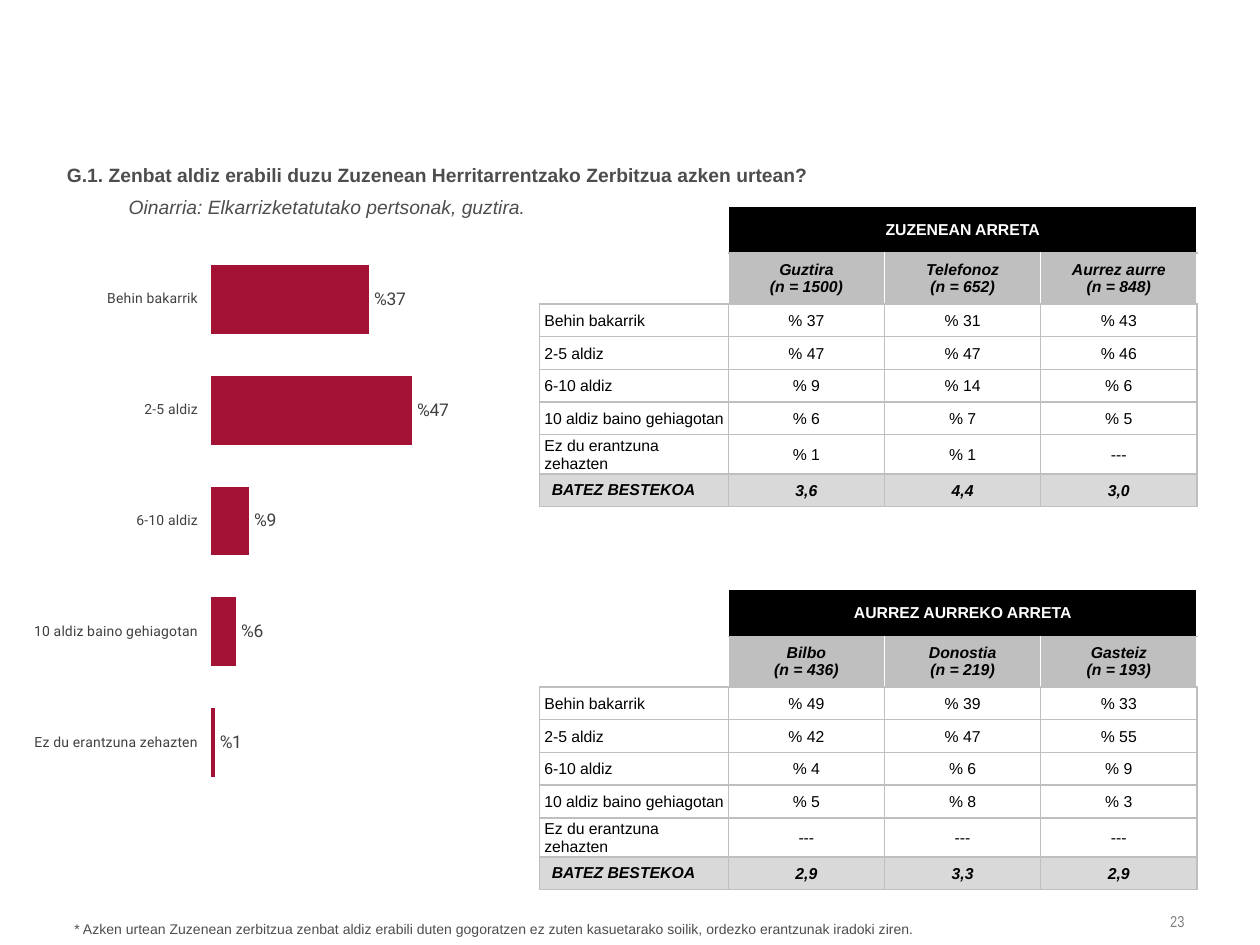
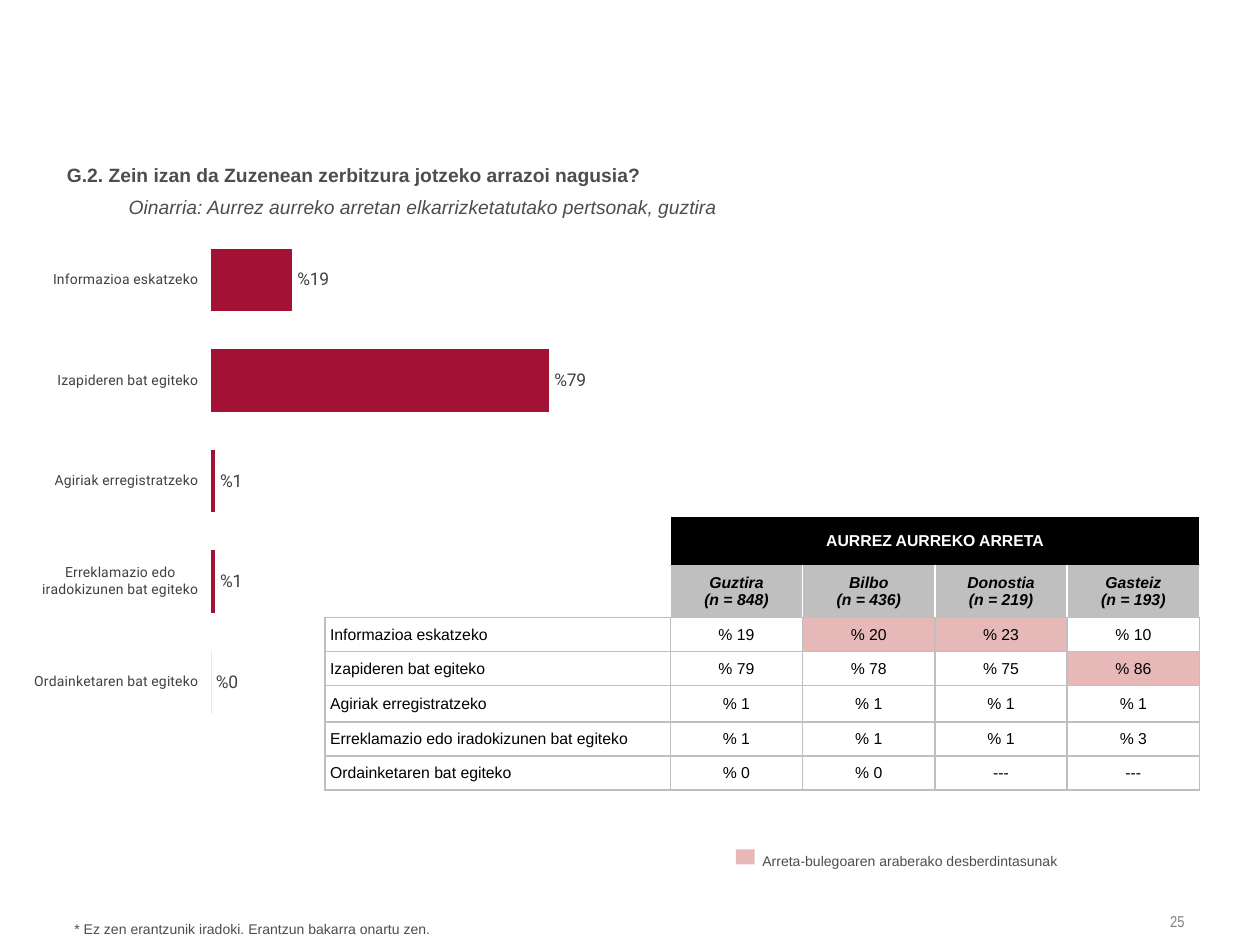
from dataclasses import dataclass
from typing import Optional

from lxml import etree
from pptx import Presentation
from pptx.chart.data import CategoryChartData
from pptx.dml.color import RGBColor
from pptx.enum.chart import XL_CHART_TYPE, XL_LABEL_POSITION, XL_TICK_LABEL_POSITION, XL_TICK_MARK
from pptx.enum.shapes import MSO_SHAPE
from pptx.enum.text import MSO_ANCHOR, MSO_AUTO_SIZE, PP_ALIGN
from pptx.oxml import parse_xml
from pptx.oxml.ns import nsdecls, qn
from pptx.util import Inches, Pt

BAR = XL_CHART_TYPE.BAR_CLUSTERED
OUTSIDE_END = XL_LABEL_POSITION.OUTSIDE_END
LABELS_LOW = XL_TICK_LABEL_POSITION.LOW
TICK_OUT = XL_TICK_MARK.OUTSIDE
RECT = MSO_SHAPE.RECTANGLE
MIDDLE = MSO_ANCHOR.MIDDLE
GROW = MSO_AUTO_SIZE.SHAPE_TO_FIT_TEXT
LEFT, CENTER, RIGHT = PP_ALIGN.LEFT, PP_ALIGN.CENTER, PP_ALIGN.RIGHT

COLORS = {
    "text": "4D4D4D",
    "number": "808080",
    "chart_text": "404040",
    "bar": "A31235",
    "black": "000000",
    "white": "FFFFFF",
    "grid": "BFBFBF",
    "mean": "D9D9D9",
    "difference": "E6B9B8",
}
FONT, NUMBER_FONT, CHART_FONT = "Arial", "Arial Narrow", "Roboto"
MEAN_LABEL = "BATEZ BESTEKOA"
TEXT_INSETS = (0.04, 0.05, 0.1, 0.05)
HEADER_INSETS = (0.1, 0.05, 0.1, 0.05)
LABEL_INSETS = (0.04, 0.01, 0.01, 0)
VALUE_INSETS = (0.01, 0.01, 0.01, 0)
MEAN_INSETS = (0.1, 0.05, 0, 0.05)


@dataclass
class BarChart:
    top: float
    height: float
    categories: list[str]
    values: list[float]


@dataclass
class ResultTable:
    left: float
    top: float
    label_width: float
    value_width: float
    row_heights: list[float]
    heading: str
    groups: list[str]
    rows: list[list[str]]
    differences: frozenset[tuple[int, int]] = frozenset()


@dataclass
class Question:
    number: str
    title: str
    base: str
    note: str
    chart: BarChart
    tables: list[ResultTable]
    legend: Optional[str] = None


def rgb(name: str) -> RGBColor:
    return RGBColor.from_string(COLORS[name])


def style_font(font, size: float, color: str, name: str = FONT,
               bold: bool = False, italic: bool = False) -> None:
    font.name, font.size = name, Pt(size)
    font.bold, font.italic = bold, italic
    font.color.rgb = rgb(color)


def set_insets(target, insets: tuple) -> None:
    (target.margin_left, target.margin_top,
     target.margin_right, target.margin_bottom) = map(Inches, insets)


def add_text(s, box: tuple, text: str, spacing: float, margin: float, indent: float = 0):
    """Add a one-paragraph growing text box and return its paragraph."""
    tf = s.shapes.add_textbox(*map(Inches, box)).text_frame
    tf.word_wrap = True
    tf.auto_size = GROW
    set_insets(tf, TEXT_INSETS)
    p = tf.paragraphs[0]
    p.text = text
    p.line_spacing = Pt(spacing)
    p_pr = p._p.get_or_add_pPr()
    p_pr.set("marL", str(Inches(margin)))
    p_pr.set("indent", str(Inches(indent)))
    return p


def add_title(s, title: str, base: str) -> None:
    p = add_text(s, (0.49, 1.18, 9.01, 0.58), f"{title}\v{base}", 18, 0.49, -0.49)
    heading, subtitle = p.runs
    style_font(heading.font, 11, "text", bold=True)
    style_font(subtitle.font, 11, "text", italic=True)


def add_note(s, left: float, top: float, width: float, text: str) -> None:
    p = add_text(s, (left, top, width, 0.38), text, 20, 0.06)
    style_font(p.runs[0].font, 8, "text")


def add_page_number(s, number: str) -> None:
    tf = s.shapes.add_textbox(*map(Inches, (8.7, 7.17, 0.8, 0.28))).text_frame
    tf.word_wrap = True
    tf.vertical_anchor = MIDDLE
    tf.text = number
    p = tf.paragraphs[0]
    p.alignment = RIGHT
    style_font(p.runs[0].font, 9, "number", NUMBER_FONT)


def set_plot_area(chart, **fractions: float) -> None:
    """Fix the inner plot area, given as x, y, w, h fractions of the chart."""
    plot_area = chart._chartSpace.find(".//" + qn("c:plotArea"))
    for old in plot_area.findall(qn("c:layout")):
        plot_area.remove(old)
    layout = etree.Element(qn("c:layout"))
    manual = etree.SubElement(layout, qn("c:manualLayout"))
    settings = {"layoutTarget": "inner", "xMode": "edge", "yMode": "edge", **fractions}
    for tag, value in settings.items():
        etree.SubElement(manual, qn(f"c:{tag}")).set("val", str(value))
    plot_area.insert(0, layout)


def add_bar_chart(s, spec: BarChart) -> None:
    data = CategoryChartData(number_format="0%")
    data.categories = spec.categories
    data.add_series("Series 1", spec.values)
    box = map(Inches, (0.27, spec.top, 4.82, spec.height))
    chart = s.shapes.add_chart(BAR, *box, data).chart
    chart.has_title = chart.has_legend = False
    style_font(chart.font, 10, "chart_text", CHART_FONT)
    set_plot_area(chart, x=0.288, y=0.008, w=0.709, h=0.991)

    axis = chart.category_axis
    axis.reverse_order = True
    axis.major_tick_mark = TICK_OUT
    axis.tick_label_position = LABELS_LOW
    axis.format.line.fill.background()
    style_font(axis.tick_labels.font, 8, "chart_text", CHART_FONT)
    axis = chart.value_axis
    axis.minimum_scale, axis.maximum_scale, axis.major_unit = 0, 1, 0.5
    axis.has_major_gridlines = False
    axis.visible = False

    plot = chart.plots[0]
    plot.gap_width = 61
    plot.vary_by_categories = False
    fill = plot.series[0].format.fill
    fill.solid()
    fill.fore_color.rgb = rgb("bar")
    plot.has_data_labels = True
    labels = plot.data_labels
    labels.show_value = True
    labels.number_format, labels.number_format_is_linked = "%0", False
    labels.position = OUTSIDE_END
    style_font(labels.font, 10, "chart_text", CHART_FONT)


def set_borders(cell, left: str, right: str, top: str, bottom: str) -> None:
    tc_pr = cell._tc.get_or_add_tcPr()
    for i, (side, color) in enumerate(zip("LRTB", (left, right, top, bottom))):
        tc_pr.insert(i, parse_xml(
            f'<a:ln{side} {nsdecls("a")} w="{Pt(1)}"><a:solidFill>'
            f'<a:srgbClr val="{COLORS[color]}"/></a:solidFill></a:ln{side}>'))


def fill_cell(cell, text: str, fill: str, insets: tuple, align=CENTER,
              color: str = "black", bold: bool = False, italic: bool = False) -> None:
    cell.text = text
    cell.vertical_anchor = MIDDLE
    set_insets(cell, insets)
    cell.fill.solid()
    cell.fill.fore_color.rgb = rgb(fill)
    for p in cell.text_frame.paragraphs:
        p.alignment = align
        for r in p.runs:
            style_font(r.font, 9, color, bold=bold, italic=italic)


def add_result_table(s, spec: ResultTable) -> None:
    widths = [spec.label_width] + [spec.value_width] * len(spec.groups)
    box = (spec.left, spec.top, sum(widths), sum(spec.row_heights))
    table = s.shapes.add_table(len(spec.row_heights), len(widths), *map(Inches, box)).table
    table.first_row = table.horz_banding = False
    for column, width in zip(table.columns, widths):
        column.width = Inches(width)
    for row, height in zip(table.rows, spec.row_heights):
        row.height = Inches(height)

    for i in range(2):
        corner = table.cell(i, 0)
        corner.fill.background()
        set_insets(corner, (0, 0, 0, 0))
    fill_cell(table.cell(0, 1), spec.heading, "black", HEADER_INSETS, color="white", bold=True)
    for j, group in enumerate(spec.groups, 1):
        fill_cell(table.cell(1, j), group, "grid", HEADER_INSETS, bold=True, italic=True)
    for i, (label, *values) in enumerate(spec.rows):
        mean = label == MEAN_LABEL
        fill = "mean" if mean else "white"
        fill_cell(table.cell(i + 2, 0), label, fill, MEAN_INSETS if mean else LABEL_INSETS,
                  LEFT, bold=mean, italic=mean)
        for j, value in enumerate(values):
            cell_fill = "difference" if (i, j) in spec.differences else fill
            fill_cell(table.cell(i + 2, j + 1), value, cell_fill, VALUE_INSETS,
                      bold=mean, italic=mean)

    for i in range(len(spec.row_heights)):
        for j in range(len(widths)):
            side = "white" if i < 2 else "grid"
            top = "white" if i == 0 or (i, j) == (1, 0) else "grid"
            bottom = "white" if (i, j) == (0, 0) else "grid"
            set_borders(table.cell(i, j), side, side, top, bottom)
    table.cell(0, 1).merge(table.cell(0, len(spec.groups)))


def add_legend(s, text: str) -> None:
    sp = s.shapes.add_shape(RECT, *map(Inches, (5.84, 6.74, 0.15, 0.12)))
    sp.shadow.inherit = False
    sp.fill.solid()
    sp.fill.fore_color.rgb = rgb("difference")
    sp.line.fill.background()
    add_note(s, 5.95, 6.57, 2.68, text)


def add_question(prs, q: Question) -> None:
    s = prs.slides.add_slide(prs.slide_layouts[6])
    add_bar_chart(s, q.chart)
    add_page_number(s, q.number)
    add_title(s, q.title, q.base)
    for table in q.tables:
        add_result_table(s, table)
    add_note(s, 0.49, 7.11, 9.01, q.note)
    if q.legend:
        add_legend(s, q.legend)


TIMES = ["Behin bakarrik", "2-5 aldiz", "6-10 aldiz", "10 aldiz baino gehiagotan",
         "Ez du erantzuna zehazten"]
REASONS = ["Informazioa eskatzeko", "Izapideren bat egiteko", "Agiriak erregistratzeko",
           "Erreklamazio edo iradokizunen bat egiteko", "Ordainketaren bat egiteko"]
OFFICES = ["Bilbo\n(n = 436)", "Donostia\n(n = 219)", "Gasteiz\n(n = 193)"]
TIMES_HEIGHTS = [0.37, 0.38] + [0.26] * 6


def label_rows(labels: list[str], values: list[list[str]]) -> list[list[str]]:
    return [[label, *row] for label, row in zip(labels, values)]


QUESTIONS = [
    Question(
        "23", "G.1. Zenbat aldiz erabili duzu Zuzenean Herritarrentzako Zerbitzua azken urtean?",
        "Oinarria: Elkarrizketatutako pertsonak, guztira.",
        "* Azken urtean Zuzenean zerbitzua zenbat aldiz erabili duten gogoratzen ez zuten "
        "kasuetarako soilik, ordezko erantzunak iradoki ziren.",
        BarChart(1.9, 4.44, TIMES, [0.37, 0.47, 0.09, 0.06, 0.01]),
        [ResultTable(4.28, 1.64, 1.5, 1.24, TIMES_HEIGHTS, "ZUZENEAN ARRETA",
                     ["Guztira\n(n = 1500)", "Telefonoz\n(n = 652)", "Aurrez aurre\n(n = 848)"],
                     label_rows(TIMES + [MEAN_LABEL], [
                         ["% 37", "% 31", "% 43"], ["% 47", "% 47", "% 46"],
                         ["% 9", "% 14", "% 6"], ["% 6", "% 7", "% 5"],
                         ["% 1", "% 1", "---"], ["3,6", "4,4", "3,0"]])),
         ResultTable(4.28, 4.68, 1.5, 1.24, TIMES_HEIGHTS, "AURREZ AURREKO ARRETA", OFFICES,
                     label_rows(TIMES + [MEAN_LABEL], [
                         ["% 49", "% 39", "% 33"], ["% 42", "% 47", "% 55"],
                         ["% 4", "% 6", "% 9"], ["% 5", "% 8", "% 3"],
                         ["---", "---", "---"], ["2,9", "3,3", "2,9"]]))]),
    Question(
        "25", "G.2. Zein izan da Zuzenean zerbitzura jotzeko arrazoi nagusia?",
        "Oinarria: Aurrez aurreko arretan elkarrizketatutako pertsonak, guztira",
        "* Ez zen erantzunik iradoki. Erantzun bakarra onartu zen.",
        BarChart(1.79, 4.03, REASONS, [0.19, 0.79, 0.01, 0.01, 0]),
        [ResultTable(2.58, 4.1, 2.74, 1.05, [0.39, 0.41, 0.27, 0.27, 0.29, 0.27, 0.27],
                     "AURREZ AURREKO ARRETA", ["Guztira\n(n = 848)", *OFFICES],
                     label_rows(REASONS, [
                         ["% 19", "% 20", "% 23", "% 10"], ["% 79", "% 78", "% 75", "% 86"],
                         ["% 1", "% 1", "% 1", "% 1"], ["% 1", "% 1", "% 1", "% 3"],
                         ["% 0", "% 0", "---", "---"]]),
                     frozenset({(0, 1), (0, 2), (1, 3)}))],
        "Arreta-bulegoaren araberako desberdintasunak"),
]


def main() -> None:
    prs = Presentation()
    prs.slide_width, prs.slide_height = Inches(10), Inches(7.5)
    for question in QUESTIONS:
        add_question(prs, question)
    prs.save("out.pptx")


if __name__ == "__main__":
    main()
